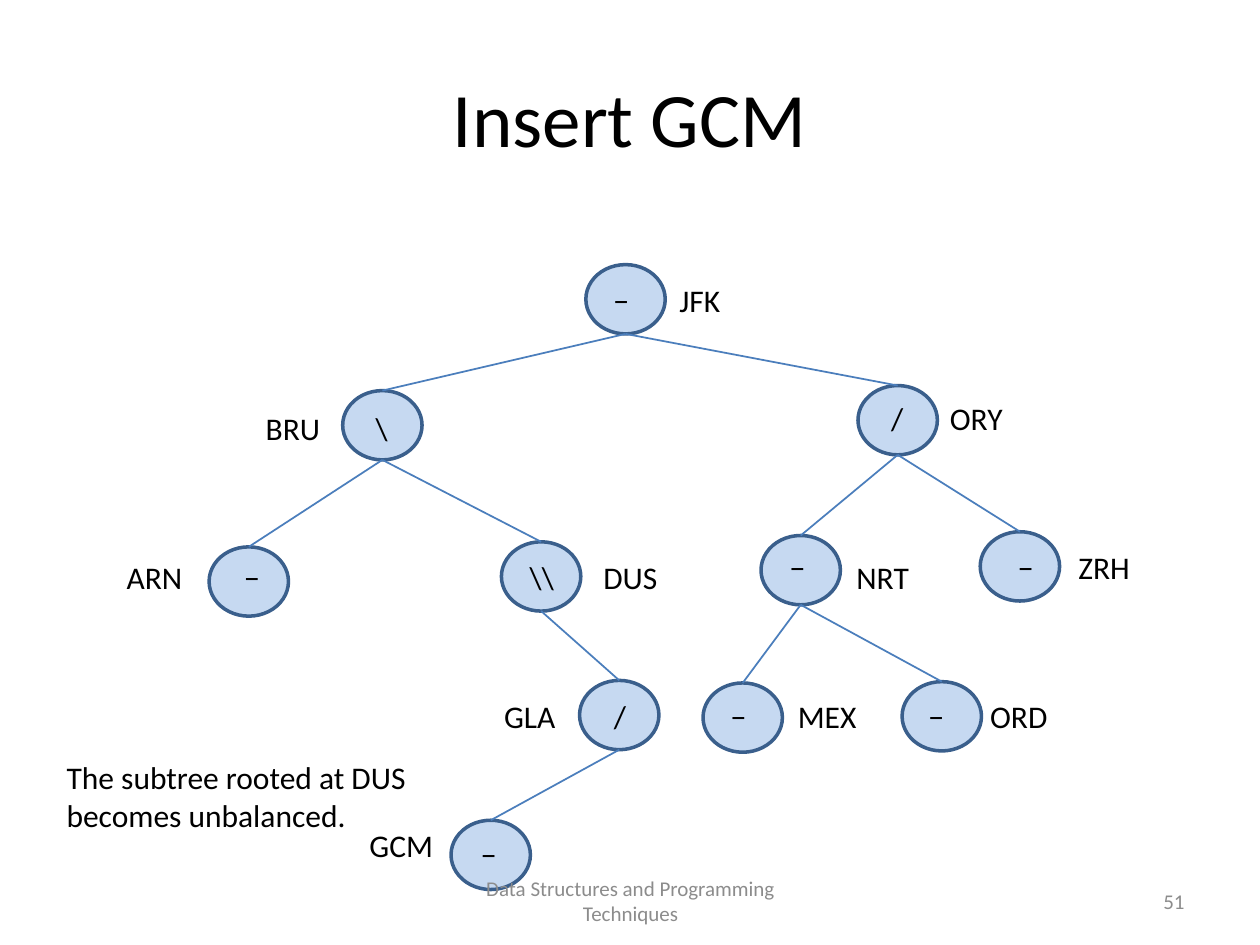
from pptx import Presentation
from pptx.dml.color import RGBColor
from pptx.enum.shapes import MSO_CONNECTOR, MSO_SHAPE
from pptx.enum.text import MSO_ANCHOR, PP_ALIGN
from pptx.oxml.ns import qn
from pptx.util import Inches, Pt
from lxml.etree import SubElement

COLORS = {
    "text": "000000",
    "footer": "8C8C8C",
    "node": "C6D9F1",
    "outline": "3A5F8C",
    "edge": "4B7EBC",
}
NODE_W, NODE_H = 0.63, 0.55
MARK_W, TEXT_H = 0.77, 0.4
LEFT, CENTER, RIGHT = PP_ALIGN.LEFT, PP_ALIGN.CENTER, PP_ALIGN.RIGHT

# Airport: node left, top; label left, top, width, alignment;
# balance mark, its center and top
NODES = {
    "JFK": (4.65, 2.1, 5.24, 2.18, 0.63, CENTER, "−", 4.93, 2.18),
    "BRU": (2.72, 3.1, 1.93, 3.2, 0.79, CENTER, "\\", 3.03, 3.2),
    "ORY": (6.81, 3.06, 7.44, 3.12, 0.63, LEFT, "/", 7.12, 3.12),
    "ARN": (1.66, 4.34, 0.83, 4.38, 0.79, CENTER, "−", 2.0, 4.38),
    "DUS": (3.98, 4.3, 4.69, 4.38, 0.63, LEFT, "\\\\", 4.3, 4.38),
    "NRT": (6.04, 4.25, 6.65, 4.38, 0.71, CENTER, "−", 6.33, 4.3),
    "ZRH": (7.78, 4.22, 8.46, 4.3, 0.63, LEFT, "−", 8.14, 4.3),
    "GLA": (4.6, 5.4, 3.82, 5.48, 0.77, CENTER, "/", 4.92, 5.48),
    "MEX": (5.58, 5.42, 6.18, 5.48, 0.77, CENTER, "−", 5.86, 5.48),
    "ORD": (7.16, 5.41, 7.76, 5.48, 0.71, LEFT, "−", 7.43, 5.48),
    "GCM": (3.58, 6.51, 2.8, 6.51, 0.77, CENTER, "−", 3.88, 6.58),
}
EDGES = [
    ("JFK", "BRU"), ("JFK", "ORY"), ("BRU", "ARN"), ("BRU", "DUS"),
    ("ORY", "NRT"), ("ORY", "ZRH"), ("DUS", "GLA"), ("NRT", "MEX"),
    ("NRT", "ORD"), ("GLA", "GCM"),
]


def add_text(text, left, top, width, height=TEXT_H, size=18, align=LEFT,
             color="text", anchor=MSO_ANCHOR.TOP):
    box = slide.shapes.add_textbox(
        Inches(left), Inches(top), Inches(width), Inches(height))
    frame = box.text_frame
    frame.word_wrap = True
    frame.vertical_anchor = anchor
    frame.text = text
    paragraph = frame.paragraphs[0]
    paragraph.alignment = align
    paragraph.font.name = "Calibri"
    paragraph.font.size = Pt(size)
    paragraph.font.color.rgb = RGBColor.from_string(COLORS[color])


prs = Presentation()
prs.slide_width, prs.slide_height = Inches(10), Inches(7.5)
slide = prs.slides.add_slide(prs.slide_layouts[6])

# Title
add_text("Insert GCM", 0.5, 0.3, 9, 1.25, 44, CENTER, anchor=MSO_ANCHOR.MIDDLE)

# Tree nodes and their labels
for airport, (x, y, label_x, label_y, label_w, align, *_) in NODES.items():
    node = slide.shapes.add_shape(
        MSO_SHAPE.OVAL, Inches(x), Inches(y), Inches(NODE_W), Inches(NODE_H))
    node.shadow.inherit = False
    node.fill.solid()
    node.fill.fore_color.rgb = RGBColor.from_string(COLORS["node"])
    node.line.color.rgb = RGBColor.from_string(COLORS["outline"])
    node.line.width = Pt(2)
    add_text(airport, label_x, label_y, label_w, align=align)

# Edges from the bottom of a parent to the top of its child
for parent, child in EDGES:
    parent_x, parent_y = NODES[parent][:2]
    child_x, child_y = NODES[child][:2]
    edge = slide.shapes.add_connector(
        MSO_CONNECTOR.STRAIGHT,
        Inches(parent_x + NODE_W / 2), Inches(parent_y + NODE_H),
        Inches(child_x + NODE_W / 2), Inches(child_y))
    edge.line.color.rgb = RGBColor.from_string(COLORS["edge"])
    edge.line.width = Pt(1)
    SubElement(edge._element.spPr, qn("a:effectLst"))

# Remark
add_text("The subtree rooted at DUS becomes unbalanced.", 0.43, 5.97, 2.91, 0.71)

# Footer and page number
add_text("Data Structures and Programming Techniques", 3.42, 6.95, 3.17,
         size=12, align=CENTER, color="footer", anchor=MSO_ANCHOR.MIDDLE)
add_text("51", 7.17, 6.95, 2.33,
         size=12, align=RIGHT, color="footer", anchor=MSO_ANCHOR.MIDDLE)

# Balance marks on the nodes
for *_, mark, mark_center, mark_top in NODES.values():
    add_text(mark, mark_center - MARK_W / 2, mark_top, MARK_W, align=CENTER)

prs.save("out.pptx")
